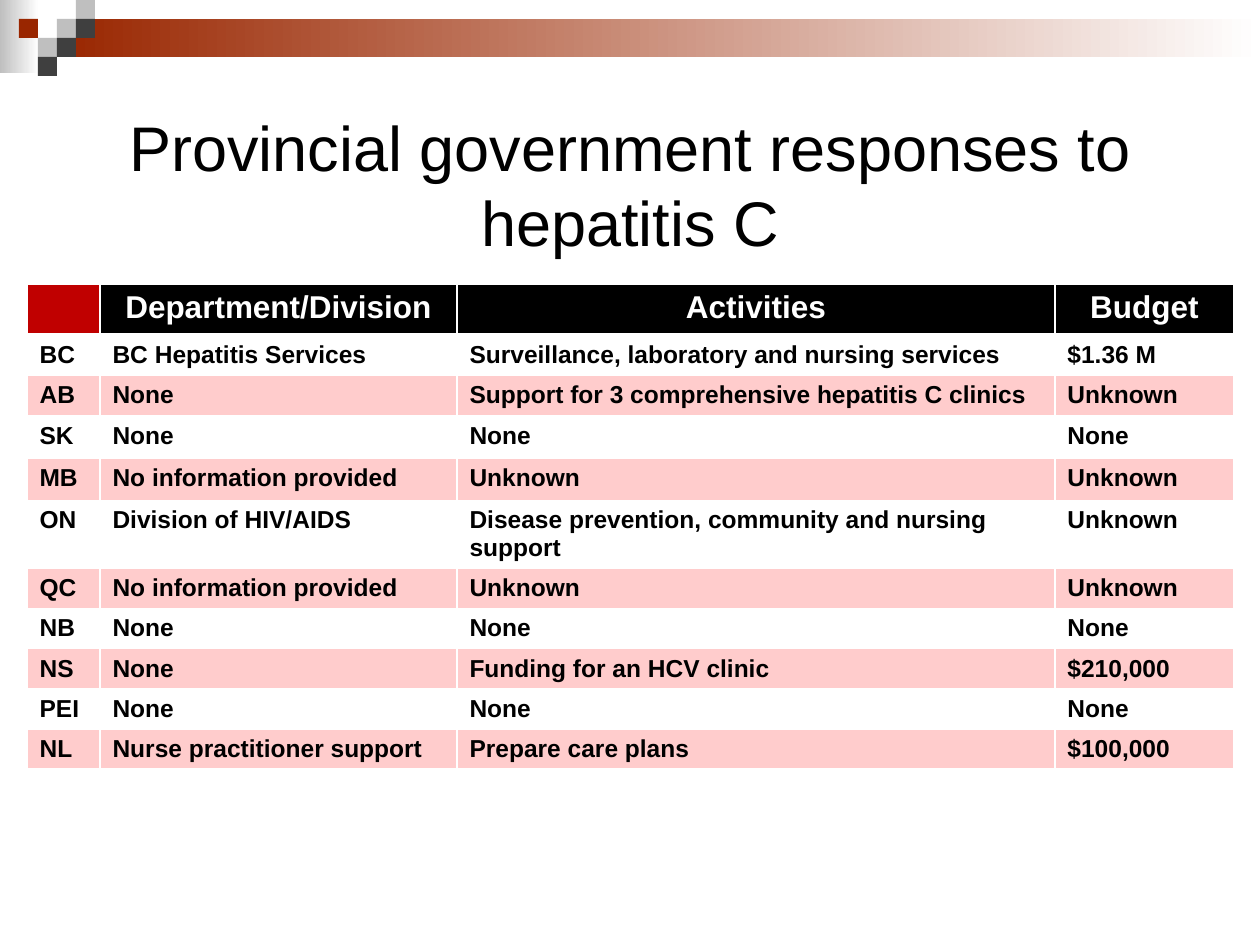
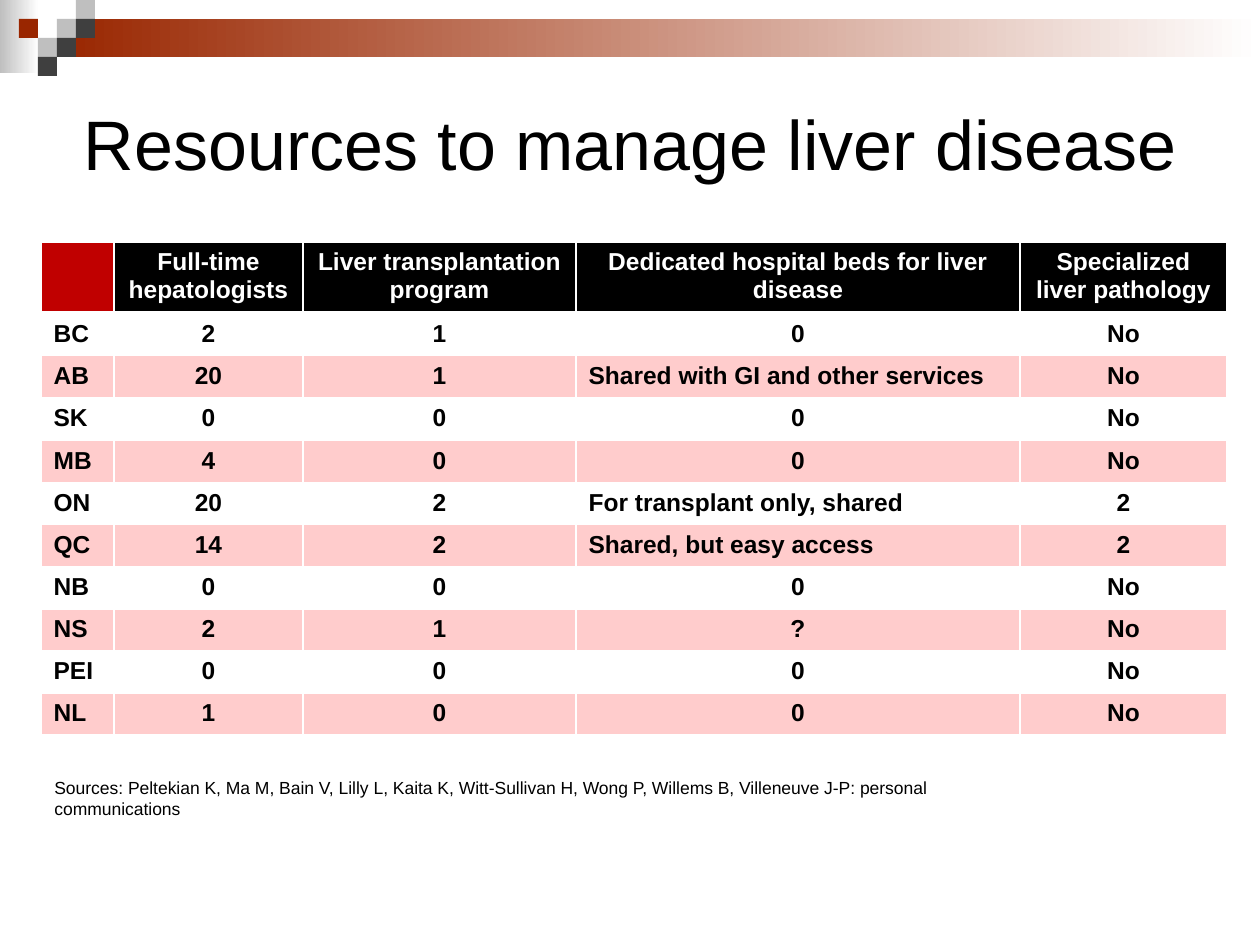
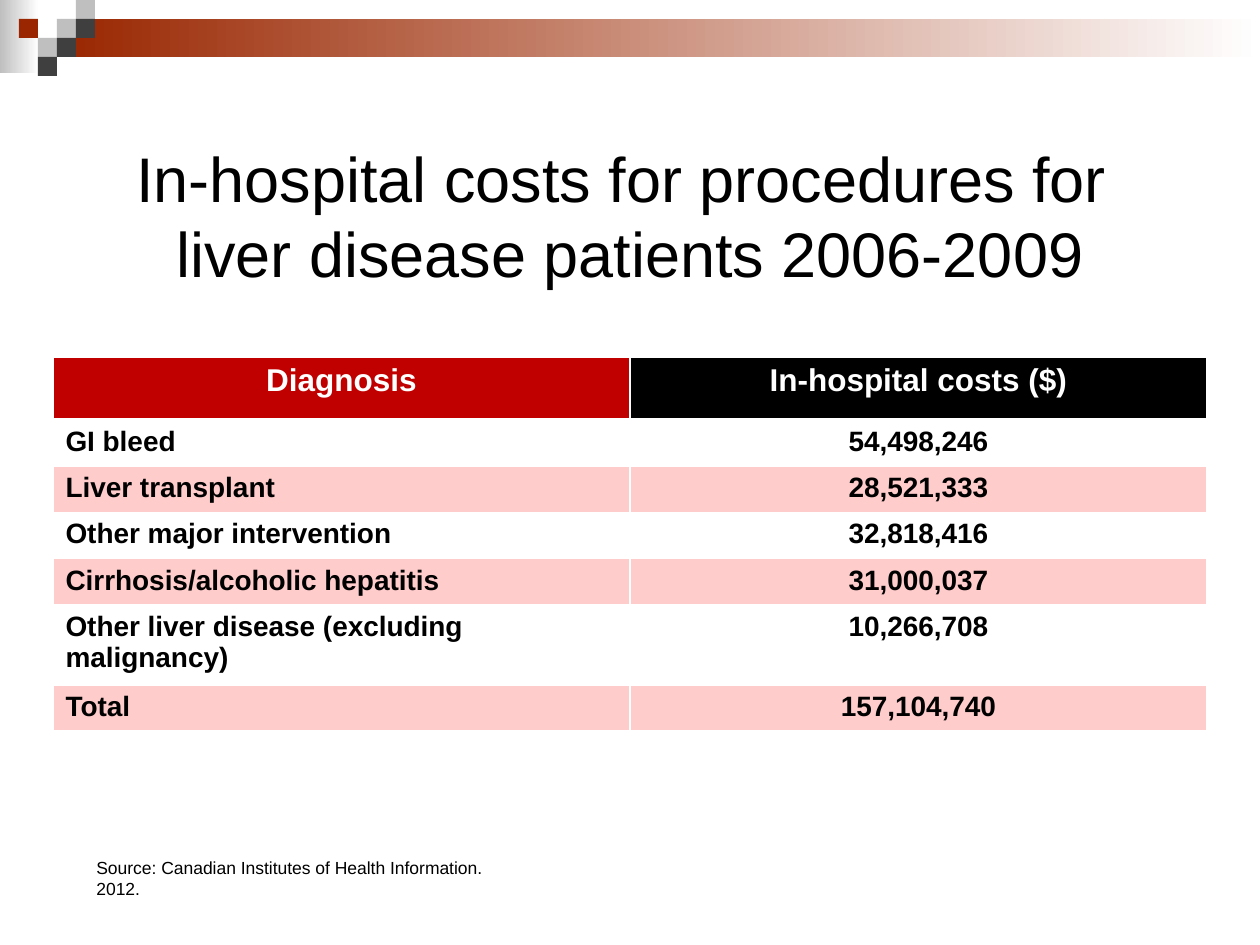
from lxml import etree
from pptx import Presentation
from pptx.dml.color import RGBColor
from pptx.enum.shapes import MSO_SHAPE
from pptx.enum.text import MSO_ANCHOR, MSO_AUTO_SIZE, PP_ALIGN
from pptx.oxml.ns import qn
from pptx.util import Emu, Pt

LEFT, CENTER = PP_ALIGN.LEFT, PP_ALIGN.CENTER
MIDDLE = MSO_ANCHOR.MIDDLE
NO_AUTOFIT = MSO_AUTO_SIZE.NONE
RECT = MSO_SHAPE.RECTANGLE

WHITE = RGBColor(0xFF, 0xFF, 0xFF)
BLACK = RGBColor(0x00, 0x00, 0x00)
RED = RGBColor(0xC0, 0x00, 0x00)
PINK = RGBColor(0xFF, 0xCC, 0xCC)
RUST = RGBColor(0x99, 0x26, 0x00)
SILVER = RGBColor(0xBF, 0xBF, 0xBF)
CHARCOAL = RGBColor(0x3F, 0x3F, 0x3F)

FONT = "Arial"
TITLE_SIZE = 36
EMU_PER_PX = 914400 / 126
SLIDE_W, SLIDE_H = 1260, 945
SQUARE = 19
SQUARES = [
    (3, 1, SILVER), (4, 0, SILVER), (4, 1, CHARCOAL), (2, 2, SILVER),
    (1, 1, RUST), (3, 2, CHARCOAL), (2, 3, CHARCOAL),
]
PROVINCE_ROWS = [40, 40, 43, 42, 40, 40, 40, 40, 40, 40]

RESPONSES = [
    ["", "Department/Division", "Activities", "Budget"],
    ["BC", "BC Hepatitis Services", "Surveillance, laboratory and nursing services", "$1.36 M"],
    ["AB", "None", "Support for 3 comprehensive hepatitis C clinics", "Unknown"],
    ["SK", "None", "None", "None"],
    ["MB", "No information provided", "Unknown", "Unknown"],
    ["ON", "Division of HIV/AIDS", "Disease prevention, community and nursing support", "Unknown"],
    ["QC", "No information provided", "Unknown", "Unknown"],
    ["NB", "None", "None", "None"],
    ["NS", "None", "Funding for an HCV clinic", "$210,000"],
    ["PEI", "None", "None", "None"],
    ["NL", "Nurse practitioner support", "Prepare care plans", "$100,000"],
]
RESOURCES = [
    ["", "Full-time hepatologists", "Liver transplantation program",
     "Dedicated hospital beds for liver disease", "Specialized liver pathology"],
    ["BC", "2", "1", "0", "No"],
    ["AB", "20", "1", "Shared with GI and other services", "No"],
    ["SK", "0", "0", "0", "No"],
    ["MB", "4", "0", "0", "No"],
    ["ON", "20", "2", "For transplant only, shared", "2"],
    ["QC", "14", "2", "Shared, but easy access", "2"],
    ["NB", "0", "0", "0", "No"],
    ["NS", "2", "1", "?", "No"],
    ["PEI", "0", "0", "0", "No"],
    ["NL", "1", "0", "0", "No"],
]
COSTS = [
    ["Diagnosis", "In-hospital costs ($)"],
    ["GI bleed", "54,498,246"],
    ["Liver transplant", "28,521,333"],
    ["Other major intervention", "32,818,416"],
    ["Cirrhosis/alcoholic hepatitis", "31,000,037"],
    ["Other liver disease (excluding malignancy)", "10,266,708"],
    ["Total", "157,104,740"],
]


def px(n):
    """Turn px into EMU."""
    return Emu(round(n * EMU_PER_PX))


def write(tf, text, size=14, color=BLACK, bold=False, align=LEFT):
    """Put formatted text into a text frame."""
    tf.text = text
    p = tf.paragraphs[0]
    p.alignment = align
    for r in p.runs:
        r.font.name = FONT
        r.font.size = Pt(size)
        r.font.bold = bold
        r.font.color.rgb = color


def rect(shapes, x, y, w, h, color, fade=False):
    """Add a plain rectangle, optionally fading to white on the right."""
    sp = shapes.add_shape(RECT, px(x), px(y), px(w), px(h))
    sp.shadow.inherit = False
    sp.line.fill.background()
    if fade:
        sp.fill.gradient()
        sp.fill.gradient_angle = 0
        for stop, tone in zip(sp.fill.gradient_stops, (color, WHITE)):
            stop.color.rgb = tone
    else:
        sp.fill.solid()
        sp.fill.fore_color.rgb = color


def decorate_master(prs, s):
    """Draw the top band and squares on a slide and move them to the master."""
    group = s.shapes.add_group_shape()
    rect(group.shapes, 0, 0, 39, 73, SILVER, fade=True)
    band_x = 3 * SQUARE
    rect(group.shapes, band_x, SQUARE, SLIDE_W - band_x, 2 * SQUARE, RUST, fade=True)
    for col, row, color in SQUARES:
        rect(group.shapes, col * SQUARE, row * SQUARE, SQUARE, SQUARE, color)
    for number, props in enumerate(group.element.xpath(".//p:cNvPr"), 20):
        props.set("id", str(number))
    master = prs.slide_master
    master.shapes.element.insert(2, group.element)
    for props in master.element.xpath("p:txStyles/p:titleStyle/a:lvl1pPr/a:defRPr"):
        props.set("sz", str(TITLE_SIZE * 100))


def add_title(s, text, y, size=TITLE_SIZE):
    """Place and format the title placeholder."""
    sp = s.shapes.title
    sp.left, sp.top, sp.width, sp.height = px(63), px(y), px(1134), px(158)
    tf = sp.text_frame
    tf.auto_size = NO_AUTOFIT
    tf.vertical_anchor = MIDDLE
    write(tf, text, size=size, align=CENTER)


def add_note(s, text, x, y, w):
    """Add a small source note."""
    tf = s.shapes.add_textbox(px(x), px(y), px(w), px(34)).text_frame
    tf.word_wrap = True
    write(tf, text, size=10)


def set_borders(cell, bottom):
    """Give a cell white borders, with its own bottom width in points."""
    tcPr = cell._tc.get_or_add_tcPr()
    for i, (side, width) in enumerate(zip("LRTB", (1, 1, 1, bottom))):
        ln = etree.Element(qn(f"a:ln{side}"), w=str(Pt(width)))
        fill = etree.SubElement(ln, qn("a:solidFill"))
        etree.SubElement(fill, qn("a:srgbClr"), val=str(WHITE))
        tcPr.insert(i, ln)


def add_data_table(s, data, x, y, widths, heights, head_size, body_size=14, centre_figures=True):
    """Add a table with a dark header and alternating rows."""
    frame = s.shapes.add_table(len(data), len(widths), px(x), px(y),
                               px(sum(widths)), px(sum(heights)))
    table = frame.table
    table.horz_banding = False
    for col, width in zip(table.columns, widths):
        col.width = px(width)
    for row, height in zip(table.rows, heights):
        row.height = px(height)
    for r, values in enumerate(data):
        for c, text in enumerate(values):
            cell = table.cell(r, c)
            cell.fill.solid()
            if r == 0:
                cell.fill.fore_color.rgb = BLACK if c else RED
                write(cell.text_frame, text, size=head_size, color=WHITE, bold=True, align=CENTER)
            else:
                cell.fill.fore_color.rgb = WHITE if r % 2 else PINK
                centred = centre_figures and c > 0 and " " not in text
                write(cell.text_frame, text, size=body_size, bold=True,
                      align=CENTER if centred else LEFT)
            set_borders(cell, bottom=1 if r else 3)


def responses_slide(s):
    """Fill the slide on provincial responses."""
    add_title(s, "Provincial government responses to hepatitis C", 105)
    add_data_table(s, RESPONSES, 27, 284, [73, 357, 598, 179], [51] + PROVINCE_ROWS,
                   head_size=18, centre_figures=False)


def resources_slide(s):
    """Fill the slide on liver disease resources."""
    add_note(s, "Sources: Peltekian K, Ma M, Bain V, Lilly L, Kaita K, Witt-Sullivan H, "
             "Wong P, Willems B, Villeneuve J-P: personal communications", 42, 771, 932)
    add_title(s, "Resources to manage liver disease", 63, size=40)
    add_data_table(s, RESOURCES, 41, 242, [73, 189, 273, 444, 207], [66] + PROVINCE_ROWS,
                   head_size=14)


def costs_slide(s):
    """Fill the slide on in-hospital costs."""
    add_note(s, "Source: Canadian Institutes of Health Information. 2012.", 84, 851, 434)
    add_title(s, "In-hospital costs for procedures for \vliver disease patients 2006-2009", 136)
    add_data_table(s, COSTS, 53, 357, [577] * 2, [63] + [43] * 6, head_size=18, body_size=16)


def main():
    """Build and save the presentation."""
    prs = Presentation()
    prs.slide_width, prs.slide_height = px(SLIDE_W), px(SLIDE_H)
    title_only = prs.slide_layouts[5]
    slides = []
    for fill_slide in (responses_slide, resources_slide, costs_slide):
        s = prs.slides.add_slide(title_only)
        fill_slide(s)
        slides.append(s)
    decorate_master(prs, slides[0])
    prs.save("out.pptx")


if __name__ == "__main__":
    main()
